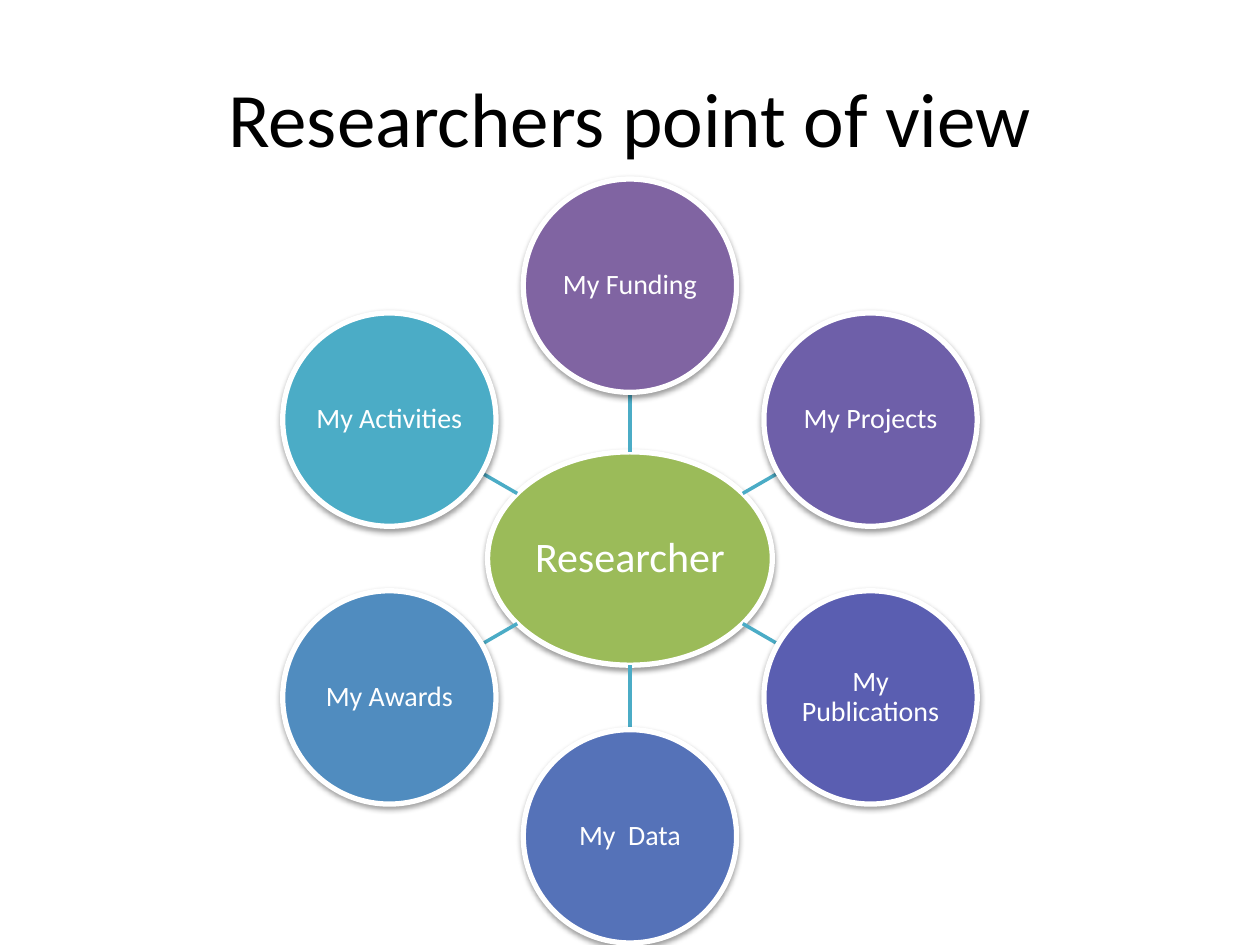
from math import cos, hypot, radians, sin

from lxml.etree import SubElement
from pptx import Presentation
from pptx.dml.color import RGBColor
from pptx.enum.shapes import MSO_CONNECTOR as Connector, MSO_SHAPE as Shape
from pptx.enum.text import MSO_ANCHOR as Anchor, PP_ALIGN as Align
from pptx.oxml.ns import qn
from pptx.util import Cm, Pt

TITLE = "Researchers point of view"
HUB = "Researcher"
NODES = [
    ("My Funding", "8064A2", 5.5),
    ("My Projects", "6E5FA9", 5.6),
    ("My Publications", "5A5EB1", 5.6),
    ("My  Data", "5572B8", 5.6),
    ("My Awards", "508CBF", 5.6),
    ("My Activities", "4BACC6", 5.6),
]

THEME = {
    "font": "Calibri",
    "title": "000000", "label": "FFFFFF", "outline": "FFFFFF",
    "hub": "9BBB59", "spoke": "4BACC6", "shadow": "000000",
    "title_size": 44, "hub_size": 24, "node_size": 16,
}
CENTER_X, CENTER_Y = 12.7, 11.26
HUB_WIDTH, DIAMETER = 5.74, 4.3


def style_text(frame, text, size, color):
    frame.text = text
    frame.word_wrap = True
    frame.vertical_anchor = Anchor.MIDDLE
    para = frame.paragraphs[0]
    para.alignment = Align.CENTER
    font = para.runs[0].font
    font.name, font.size = THEME["font"], Pt(size)
    font.color.rgb = RGBColor.from_string(color)


def add_shadow(shape):
    shape.shadow.inherit = False
    effects = shape._element.spPr.find(qn("a:effectLst"))
    outer = SubElement(effects, qn("a:outerShdw"), blurRad="40000",
                       dist="20000", dir="5400000", rotWithShape="0")
    color = SubElement(outer, qn("a:srgbClr"), val=THEME["shadow"])
    SubElement(color, qn("a:alpha"), val="38000")


def add_ellipse(slide, x, y, width, text, size, fill):
    shape = slide.shapes.add_shape(
        Shape.OVAL, Cm(x - width / 2), Cm(y - DIAMETER / 2), Cm(width), Cm(DIAMETER))
    shape.fill.solid()
    shape.fill.fore_color.rgb = RGBColor.from_string(fill)
    shape.line.color.rgb = RGBColor.from_string(THEME["outline"])
    shape.line.width = Pt(3)
    add_shadow(shape)
    frame = shape.text_frame
    frame.margin_left = frame.margin_right = Cm(0.03)
    frame.margin_top = frame.margin_bottom = Cm(0.03)
    style_text(frame, text, size, THEME["label"])
    frame.paragraphs[0].line_spacing = 0.9


def add_spoke(slide, dx, dy, distance):
    start = 1 / hypot(dx / (HUB_WIDTH / 2), dy / (DIAMETER / 2))
    end = distance - DIAMETER / 2
    spoke = slide.shapes.add_connector(
        Connector.STRAIGHT,
        Cm(CENTER_X + start * dx), Cm(CENTER_Y + start * dy),
        Cm(CENTER_X + end * dx), Cm(CENTER_Y + end * dy))
    spoke.line.color.rgb = RGBColor.from_string(THEME["spoke"])
    spoke.line.width = Pt(2)
    SubElement(spoke._element.spPr, qn("a:effectLst"))


def main():
    deck = Presentation()
    deck.slide_width, deck.slide_height = Cm(25.4), Cm(19.05)
    slide = deck.slides.add_slide(deck.slide_layouts[5])

    title = slide.shapes.title
    title.left, title.top, title.width, title.height = Cm(1.27), Cm(0.76), Cm(22.86), Cm(3.18)
    style_text(title.text_frame, TITLE, THEME["title_size"], THEME["title"])

    add_ellipse(slide, CENTER_X, CENTER_Y, HUB_WIDTH, HUB, THEME["hub_size"], THEME["hub"])
    for index, (text, fill, distance) in enumerate(NODES):
        angle = radians(index * 360 / len(NODES) - 90)
        dx, dy = cos(angle), sin(angle)
        add_spoke(slide, dx, dy, distance)
        add_ellipse(slide, CENTER_X + distance * dx, CENTER_Y + distance * dy,
                    DIAMETER, text, THEME["node_size"], fill)

    deck.save("out.pptx")


if __name__ == "__main__":
    main()
